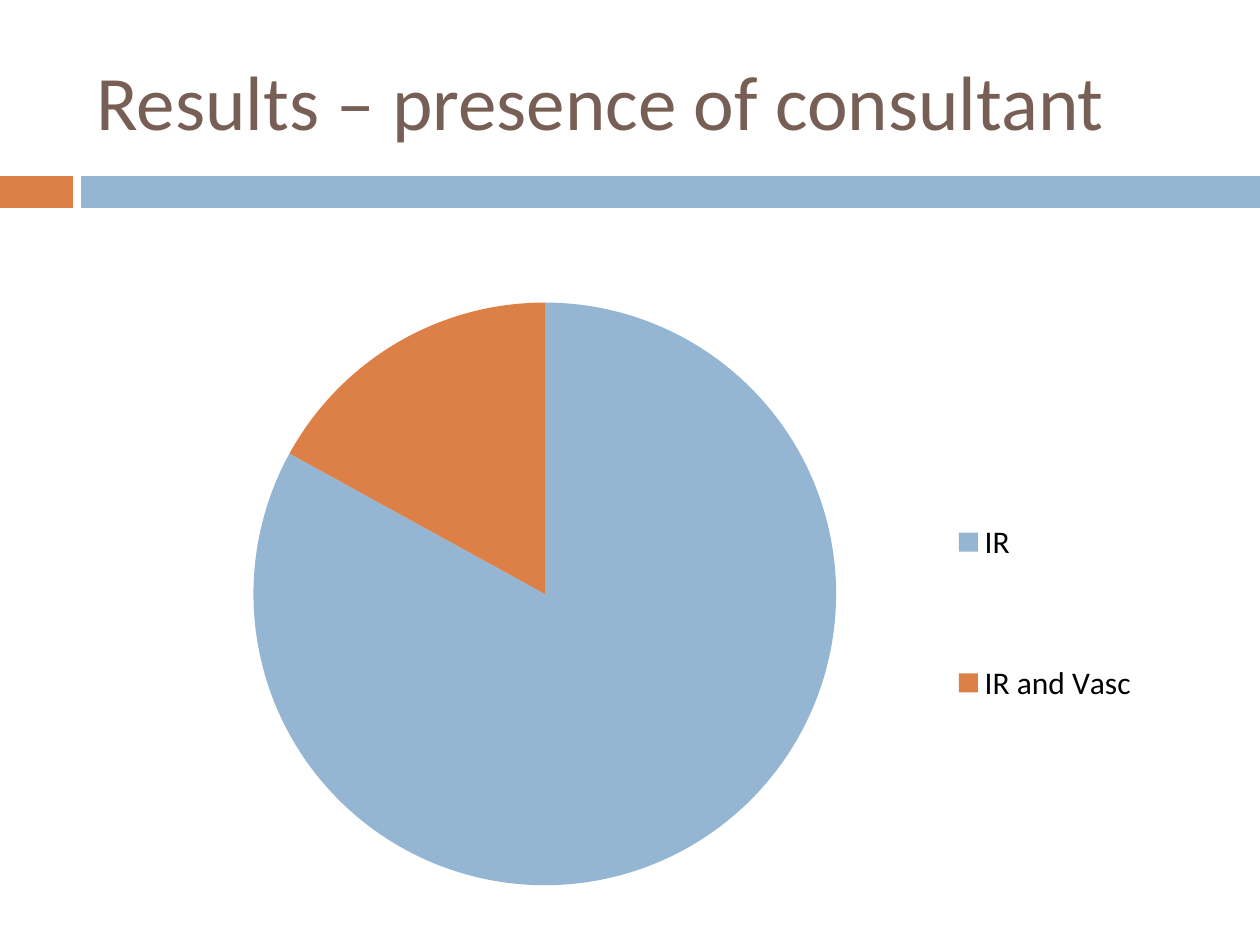
from pptx import Presentation
from pptx import util as u
from pptx.chart import data as cd
from pptx.dml import color as dml
from pptx.enum import chart as ch, shapes, text
from pptx.oxml import parse_xml
from pptx.oxml import ns

PX = u.Inches(1) // 126
BLUE, ORANGE, BROWN, BLACK = "94B6D2", "DD8047", "775F55", "000000"


def px(*lengths):
    """Turn whole pixels into EMU."""
    return [u.Emu(length * PX) for length in lengths]


def paint(colour_format, colour):
    """Give a colour format a hex colour."""
    colour_format.rgb = dml.RGBColor.from_string(colour)


def apply_format(target, values):
    """Set each attribute in a dict of format values."""
    for name, value in values.items():
        setattr(target, name, value)


def set_layout(parent, index, fractions, inner=False):
    """Place a chart part by fractions of the chart box."""
    for old in parent.findall(ns.qn("c:layout")):
        parent.remove(old)
    target = '<c:layoutTarget val="inner"/>' if inner else ""
    modes = "".join(f'<c:{axis}Mode val="edge"/>' for axis in "xy")
    sizes = "".join(f'<c:{side} val="{part}"/>' for side, part in zip("xywh", fractions))
    parent.insert(index, parse_xml(
        f'<c:layout {ns.nsdecls("c")}><c:manualLayout>{target}{modes}{sizes}'
        "</c:manualLayout></c:layout>"))


def add_band(slide, left, top, width, height):
    """Draw the two-colour band, with a small gap after its short part."""
    accent, gap = 73, 8
    bar_start = accent + gap
    for start, length, colour in ((0, accent, ORANGE), (bar_start, width - bar_start, BLUE)):
        bar = slide.shapes.add_shape(
            shapes.MSO_SHAPE.RECTANGLE, *px(left + start, top, length, height))
        bar.shadow.inherit = False
        bar.fill.solid()
        paint(bar.fill.fore_color, colour)
        bar.line.fill.background()


def add_title(slide, left, top, width, height, wording):
    """Write the slide title, centred vertically in its box."""
    frame = slide.shapes.add_textbox(*px(left, top, width, height)).text_frame
    apply_format(frame, {"word_wrap": True, "vertical_anchor": text.MSO_ANCHOR.MIDDLE})
    title = frame.paragraphs[0].add_run()
    title.text = wording
    apply_format(title.font, {"name": "Calibri", "size": u.Pt(44)})
    paint(title.font.color, BROWN)


def add_consultant_pie(slide, left, top, width, height):
    """Chart which consultants were present, with a legend at the right."""
    presence = cd.CategoryChartData()
    presence.categories = ["IR", "IR and Vasc"]
    presence.add_series("Series 1", [83, 17])
    pie = slide.shapes.add_chart(
        ch.XL_CHART_TYPE.PIE, *px(left, top, width, height), presence).chart
    apply_format(pie, {"has_title": False, "has_legend": True})
    apply_format(pie.font, {"name": "Calibri", "size": u.Pt(18)})
    paint(pie.font.color, BLACK)
    apply_format(pie.legend, {"position": ch.XL_LEGEND_POSITION.RIGHT,
                              "include_in_layout": False})
    plot = pie.plots[0]
    plot.vary_by_categories = True
    for index, colour in enumerate((BLUE, ORANGE)):
        slice_format = plot.series[0].points[index].format
        slice_format.fill.solid()
        paint(slice_format.fill.fore_color, colour)
        slice_format.line.fill.background()
    plot_area = pie.element.find(".//" + ns.qn("c:plotArea"))
    legend = pie.element.find(".//" + ns.qn("c:legend"))
    set_layout(plot_area, 0, (0.15, 0.03, 0.52, 0.94), inner=True)
    set_layout(legend, 1, (0.77, 0.22, 0.17, 0.62))


def main():
    """Build and save the results slide."""
    deck = Presentation()
    deck.slide_width, deck.slide_height = px(1260, 945)
    slide = deck.slides.add_slide(deck.slide_layouts[6])
    add_band(slide, 0, 176, 1260, 32)
    add_title(slide, 84, 32, 1124, 136, "Results – presence of consultant")
    add_consultant_pie(slide, 84, 284, 1124, 620)
    deck.save("out.pptx")


if __name__ == "__main__":
    main()
